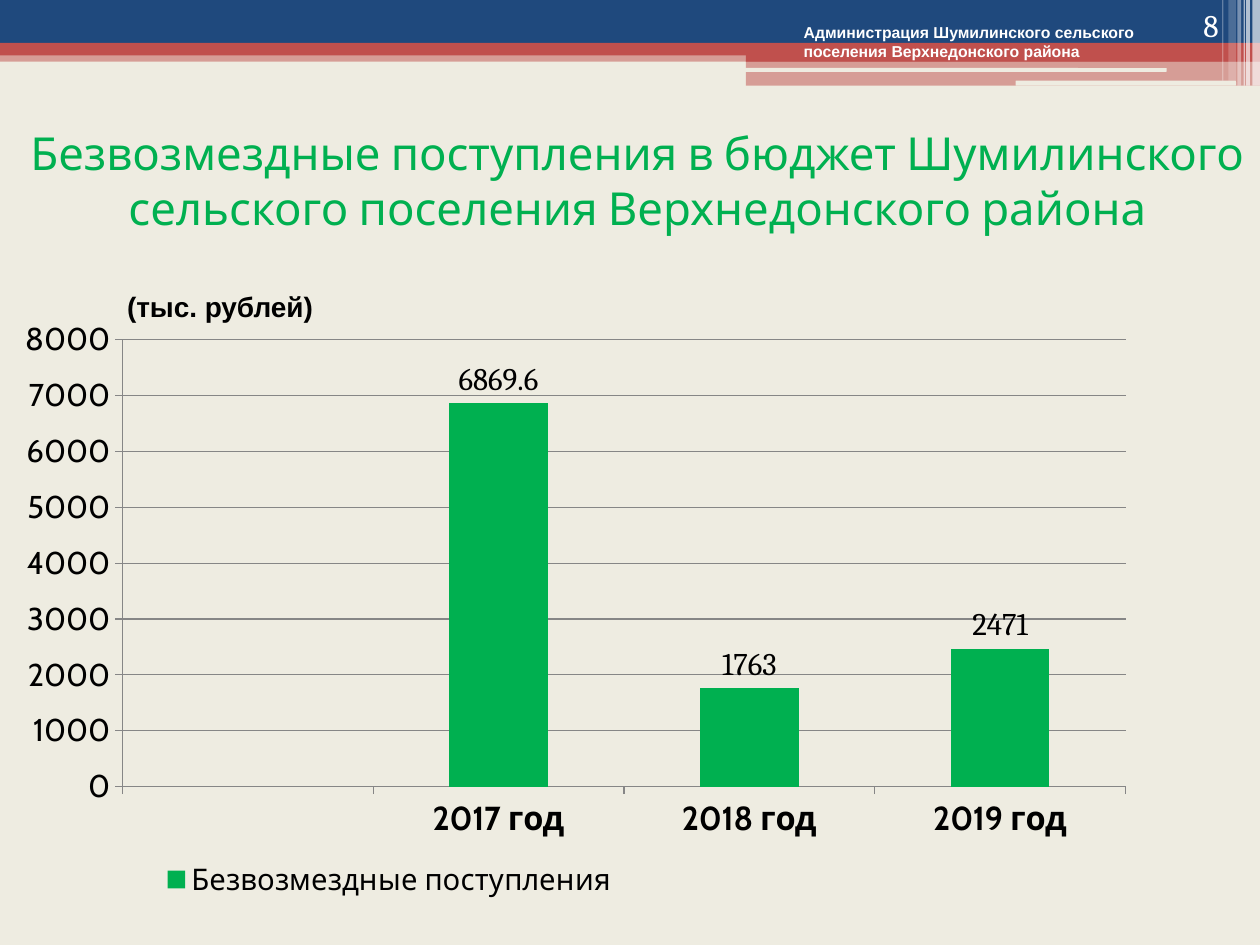
from lxml import etree
from pptx import Presentation
from pptx import util as u
from pptx.chart.data import CategoryChartData
from pptx.dml.color import RGBColor
from pptx.enum import chart as ch, shapes, text
from pptx.oxml import ns, parse_xml

Inches, Pt = u.Inches, u.Pt
COLORS = {"cream": "EEECE1", "navy": "1F497D", "red": "C0504D", "white": "FFFFFF",
          "green": "00B050", "black": "000000", "grid": "868686"}
RGB = {name: RGBColor.from_string(value) for name, value in COLORS.items()}

presentation = Presentation()
presentation.slide_width, presentation.slide_height = Inches(10), Inches(7.5)
slide = presentation.slides.add_slide(presentation.slide_layouts[6])
slide.background.fill.solid()
slide.background.fill.fore_color.rgb = RGB["cream"]


def add_band(box, color, opacity=100, kind=shapes.MSO_SHAPE.RECTANGLE):
    """Add a borderless header strip; opacity is in percent."""
    shape = slide.shapes.add_shape(kind, *map(Inches, box))
    shape.shadow.inherit = False
    shape.line.fill.background()
    shape.fill.solid()
    shape.fill.fore_color.rgb = RGB[color]
    if opacity < 100:
        srgb = shape.fill._xPr.find(".//" + ns.qn("a:srgbClr"))
        etree.SubElement(srgb, ns.qn("a:alpha"), val=str(opacity * 1000))


def add_text(box, content, font_name, size, color, bold=False,
             align=text.PP_ALIGN.LEFT, anchor=text.MSO_ANCHOR.TOP):
    frame = slide.shapes.add_textbox(*map(Inches, box)).text_frame
    frame.word_wrap = True
    frame.vertical_anchor = anchor
    paragraph = frame.paragraphs[0]
    paragraph.text = content
    paragraph.alignment = align
    font = paragraph.font
    font.name, font.size, font.bold = font_name, Pt(size), bold
    font.color.rgb = RGB[color]


# Header bands
add_band((0, 0.4, 10, 0.09), "red", 50)
add_band((0, 0, 10, 0.34), "navy")
add_band((0, 0.34, 10, 0.1), "red")
add_band((5.92, 0.39, 4.08, 0.1), "red")
add_band((5.92, 0.48, 4.08, 0.2), "red", 50)
for box in ((5.91, 0.54, 3.35, 0.03), (8.06, 0.64, 1.75, 0.04)):
    add_band(box, "cream", kind=shapes.MSO_SHAPE.ROUNDED_RECTANGLE)

# Translucent stripes at the right edge: left, width, height, opacity
for left, width, height, opacity in (
        (9.94, 0.06, 0.68, 65), (9.89, 0.03, 0.68, 65), (9.87, 0.01, 0.68, 60),
        (9.82, 0.03, 0.68, 40), (9.75, 0.06, 0.64, 20), (9.7, 0.01, 0.64, 30)):
    add_band((left, 0, width, height), "white", opacity)

add_text((0.12, 0.84, 9.88, 1.17),
         "Безвозмездные поступления в бюджет Шумилинского сельского поселения "
         "Верхнедонского района",
         "Cabin", 26, "green", align=text.PP_ALIGN.CENTER, anchor=text.MSO_ANCHOR.MIDDLE)

# Chart of grants by year, with an empty first category
data = CategoryChartData()
data.categories = ["", "2017 год", "2018 год", "2019 год"]
data.add_series("Безвозмездные поступления", [None, 6869.6, 1763, 2471])
chart = slide.shapes.add_chart(
    ch.XL_CHART_TYPE.COLUMN_CLUSTERED,
    *map(Inches, (0.2, 2.46, 8.82, 4.73)), data).chart
chart.has_title = False
chart.font.name, chart.font.size = "Cambria", Pt(18)
chart.font.color.rgb = RGB["black"]

plot = chart.plots[0]
plot.gap_width = 155
plot.vary_by_categories = False
series = plot.series[0]
series.format.fill.solid()
series.format.fill.fore_color.rgb = RGB["green"]
labels = series.data_labels
labels.show_value = True
labels.position = ch.XL_LABEL_POSITION.OUTSIDE_END

value_axis, category_axis = chart.value_axis, chart.category_axis
value_axis.minimum_scale, value_axis.maximum_scale = 0, 8000
value_axis.major_unit = 1000
value_axis.has_major_gridlines = True
value_axis.major_gridlines.format.line.color.rgb = RGB["grid"]
for axis, size, bold in ((value_axis, 18, False), (category_axis, 19, True)):
    axis.major_tick_mark = ch.XL_TICK_MARK.OUTSIDE
    axis.format.line.color.rgb = RGB["grid"]
    font = axis.tick_labels.font
    font.name, font.size, font.bold = "Cabin", Pt(size), bold

chart.has_legend = True
legend = chart.legend
legend.position = ch.XL_LEGEND_POSITION.BOTTOM
legend.include_in_layout = False
legend.font.name, legend.font.size = "Cabin", Pt(17)

# Fixed places for the plot area and the legend, as fractions of the chart
plot_area = chart._chartSpace.chart.plotArea
for old_layout in plot_area.findall(ns.qn("c:layout")):
    plot_area.remove(old_layout)
for parent, index, target, place in (
        (plot_area, 0, '<c:layoutTarget val="inner"/>', (0.07, 0.05, 0.92, 0.75)),
        (legend._element, 1, "", (0.09, 0.92, 0.45, 0.08))):
    for old_layout in parent.findall(ns.qn("c:layout")):
        parent.remove(old_layout)
    modes = '<c:xMode val="edge"/><c:yMode val="edge"/>'
    sizes = "".join(f'<c:{key} val="{value}"/>' for key, value in zip("xywh", place))
    parent.insert(index, parse_xml(
        f'<c:layout {ns.nsdecls("c")}><c:manualLayout>{target}{modes}{sizes}'
        "</c:manualLayout></c:layout>"))

add_text((8.94, 0, 0.83, 0.4), "8", "Cambria", 18, "white",
         align=text.PP_ALIGN.RIGHT, anchor=text.MSO_ANCHOR.BOTTOM)
add_text((0.91, 2.25, 1.81, 0.37), "(тыс. рублей)", "Arial", 16, "black", bold=True)
add_text((6.28, 0.13, 3.11, 0.4),
         "Администрация Шумилинского сельского поселения Верхнедонского района",
         "Arial", 9, "white", bold=True)

presentation.save("out.pptx")
